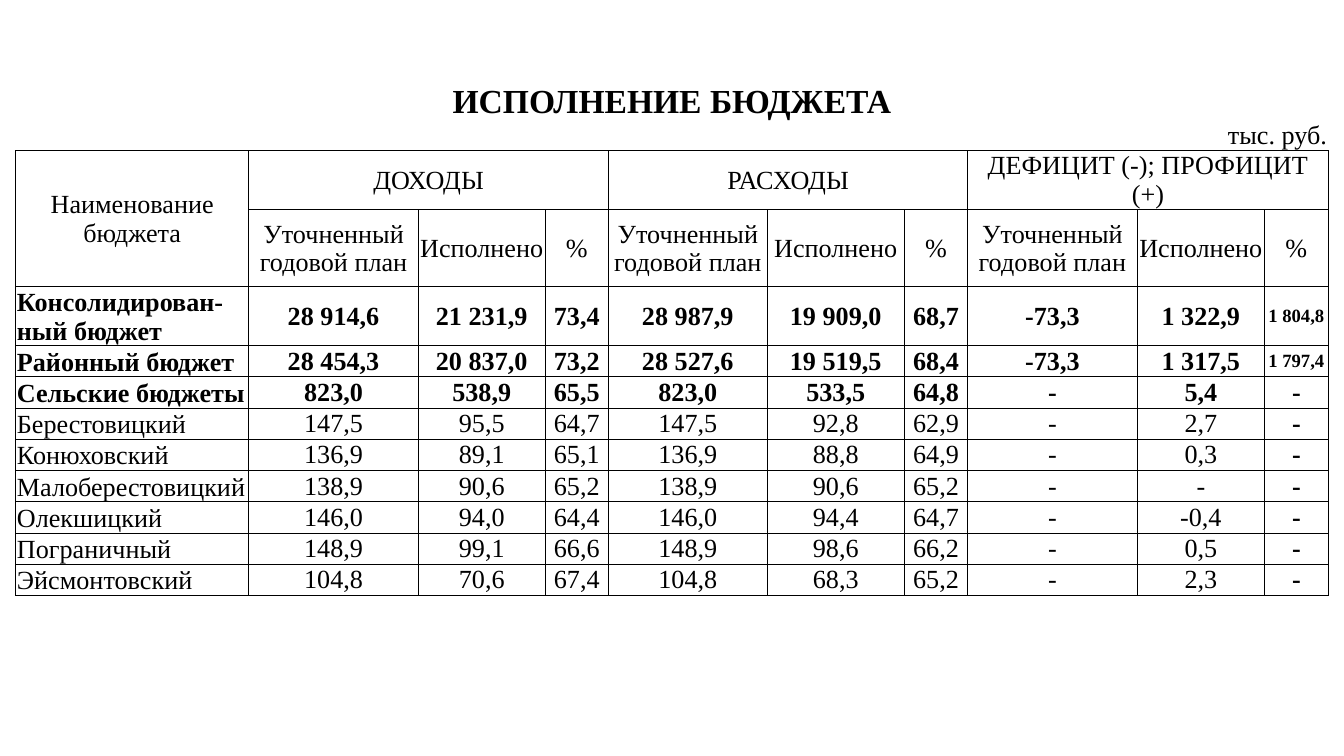
"""Build the budget execution slide with one merged table."""
from dataclasses import dataclass
from itertools import pairwise

from lxml.etree import SubElement as Sub
from pptx import Presentation as Show
from pptx.dml.color import RGBColor as Rgb
from pptx.enum.text import MSO_ANCHOR as Anchor, PP_ALIGN as Align
from pptx.oxml.ns import qn
from pptx.util import Cm, Pt


@dataclass(frozen=True)
class Theme:
    font: str = "Times New Roman"
    ink: str = "000000"
    head: int = 18
    body: int = 14
    small: int = 10
    line: float = 0.5
    pad: float = 0.02
    plain: str = "{2D5ABB26-0587-4C30-8999-92F81FD0307C}"


class Page:
    def __init__(self, show, theme):
        self.theme = theme
        self.slide = show.slides.add_slide(show.slide_layouts[6])

    def grid(self, left, top, cols, rows):
        frame = self.slide.shapes.add_table(
            len(rows), len(cols), Cm(left), Cm(top), Cm(sum(cols)), Cm(sum(rows)))
        table = frame.table
        table.first_row = table.horz_banding = False
        table._tbl.tblPr.find(qn("a:tableStyleId")).text = self.theme.plain
        for col, wide in zip(table.columns, cols):
            col.width = Cm(wide)
        for row, high in zip(table.rows, rows):
            row.height = Cm(high)
        for cell in table.iter_cells():
            cell.fill.background()
            cell.margin_left = cell.margin_right = Cm(self.theme.pad)
            cell.margin_top = cell.margin_bottom = 0
            mark = Sub(cell.text_frame.paragraphs[0]._p, qn("a:endParaRPr"))
            mark.set("sz", str(self.theme.small * 100))
        return table

    def edge(self, cell, sides):
        props = cell._tc.get_or_add_tcPr()
        for spot, side in enumerate("LRTB"):
            line = Sub(props, qn(f"a:ln{side}"), w=str(Pt(self.theme.line)))
            if side in sides:
                fill = Sub(line, qn("a:solidFill"))
                Sub(fill, qn("a:srgbClr"), val=self.theme.ink)
            else:
                Sub(line, qn("a:noFill"))
            props.insert(spot, line)

    def text(self, cell, words, size=None, bold=False,
             align=Align.CENTER, anchor=Anchor.MIDDLE, base=0.0):
        cell.vertical_anchor = anchor
        cell.margin_top, cell.margin_bottom = Cm(self.theme.pad), Cm(base)
        frame = cell.text_frame
        for spot, part in enumerate(words.split("\n")):
            para = frame.add_paragraph() if spot else frame.paragraphs[0]
            para.alignment = align
            run = para.add_run()
            run.text = part
            font = run.font
            font.name, font.size, font.bold = self.theme.font, Pt(size or self.theme.body), bold
            font.color.rgb = Rgb.from_string(self.theme.ink)

    def span(self, table, row, start, stop, deep=1):
        cell = table.cell(row, start)
        if stop - start > 1 or deep > 1:
            cell.merge(table.cell(row + deep - 1, stop - 1))
        return cell


COLS = [4.4, 2.57, 0.64, 1.65, 0.74, 1.2, 3, 0.53, 2.06, 0.23, 0.97, 3.2, 1.32, 1.09, 1.2]
ROWS = [0.72, 0.57, 1.11, 1.46, 1.11] + [0.59] * 8
STOPS = [1, 3, 5, 6, 7, 9, 11, 12, 14, 15]
GAPS = [0, 1, 2, 4, 6, 8, 10, 11, 13, 15]
GROUPS = ["ДОХОДЫ", "РАСХОДЫ", "ДЕФИЦИТ (-); ПРОФИЦИТ (+)"]
HEADS = ["Уточненный годовой план", "Исполнено", "%"]
BOLD = 3
DATA = """Консолидирован-ный бюджет|28 914,6|21 231,9|73,4|28 987,9|19 909,0|68,7|-73,3|1 322,9|1 804,8
Районный бюджет|28 454,3|20 837,0|73,2|28 527,6|19 519,5|68,4|-73,3|1 317,5|1 797,4
Сельские бюджеты|823,0|538,9|65,5|823,0|533,5|64,8|-|5,4|-
Берестовицкий|147,5|95,5|64,7|147,5|92,8|62,9|-|2,7|-
Конюховский|136,9|89,1|65,1|136,9|88,8|64,9|-|0,3|-
Малоберестовицкий|138,9|90,6|65,2|138,9|90,6|65,2|-|-|-
Олекшицкий|146,0|94,0|64,4|146,0|94,4|64,7|-|-0,4|-
Пограничный|148,9|99,1|66,6|148,9|98,6|66,2|-|0,5|-
Эйсмонтовский|104,8|70,6|67,4|104,8|68,3|65,2|-|2,3|-"""


def main():
    show = Show()
    show.slide_width, show.slide_height = Cm(25.4), Cm(14.28)
    theme = Theme()
    page = Page(show, theme)
    table = page.grid(0.3, 1.55, COLS, ROWS)
    for row in range(len(ROWS)):
        for col in range(len(COLS)):
            page.edge(table.cell(row, col), ("", "B")[row] if row < 2 else "LRTB")

    page.text(page.span(table, 0, 0, len(COLS)), "ИСПОЛНЕНИЕ БЮДЖЕТА", theme.head, True)
    for start, stop in pairwise(GAPS):
        unit = page.span(table, 1, start, stop)
    page.text(unit, "тыс. руб.", align=Align.RIGHT, anchor=Anchor.BOTTOM)

    page.text(page.span(table, 2, 0, 1, 2), "Наименование\nбюджета")
    for name, (start, stop) in zip(GROUPS, pairwise(STOPS[::3])):
        page.text(page.span(table, 2, start, stop), name)
    for name, (start, stop) in zip(HEADS * len(GROUPS), pairwise(STOPS)):
        page.text(page.span(table, 3, start, stop), name)

    for spot, line in enumerate(DATA.split("\n")):
        row, bold = spot + 4, spot < BOLD
        label, *vals = line.split("|")
        page.text(table.cell(row, 0), label, bold=bold, align=Align.LEFT, anchor=Anchor.BOTTOM)
        for val, (start, stop) in zip(vals, pairwise(STOPS)):
            last = stop == len(COLS)
            size = theme.small if last and len(val) > 5 else theme.body
            page.text(page.span(table, row, start, stop), val, size, bold or last, base=theme.pad)
    show.save("out.pptx")


if __name__ == "__main__":
    main()
